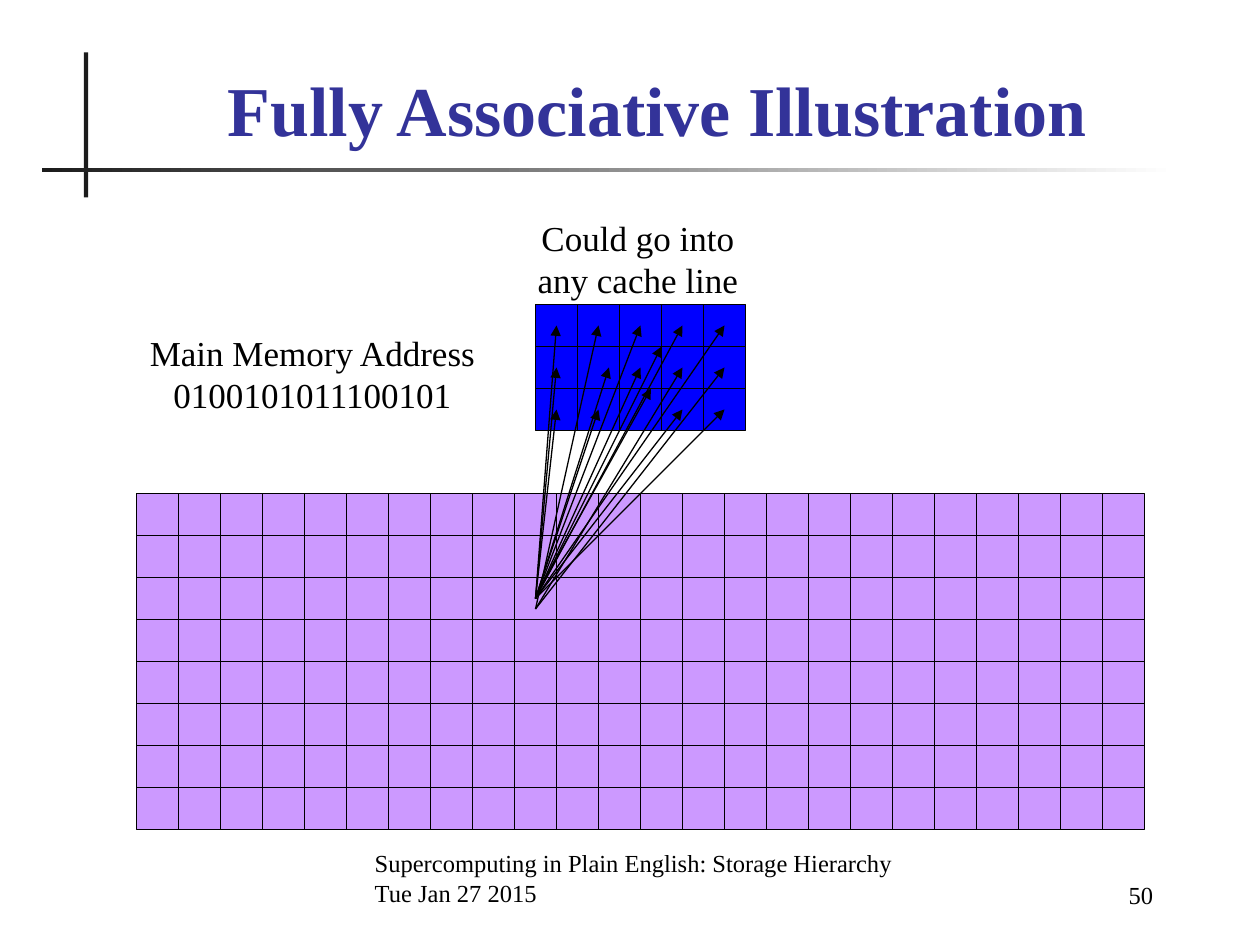
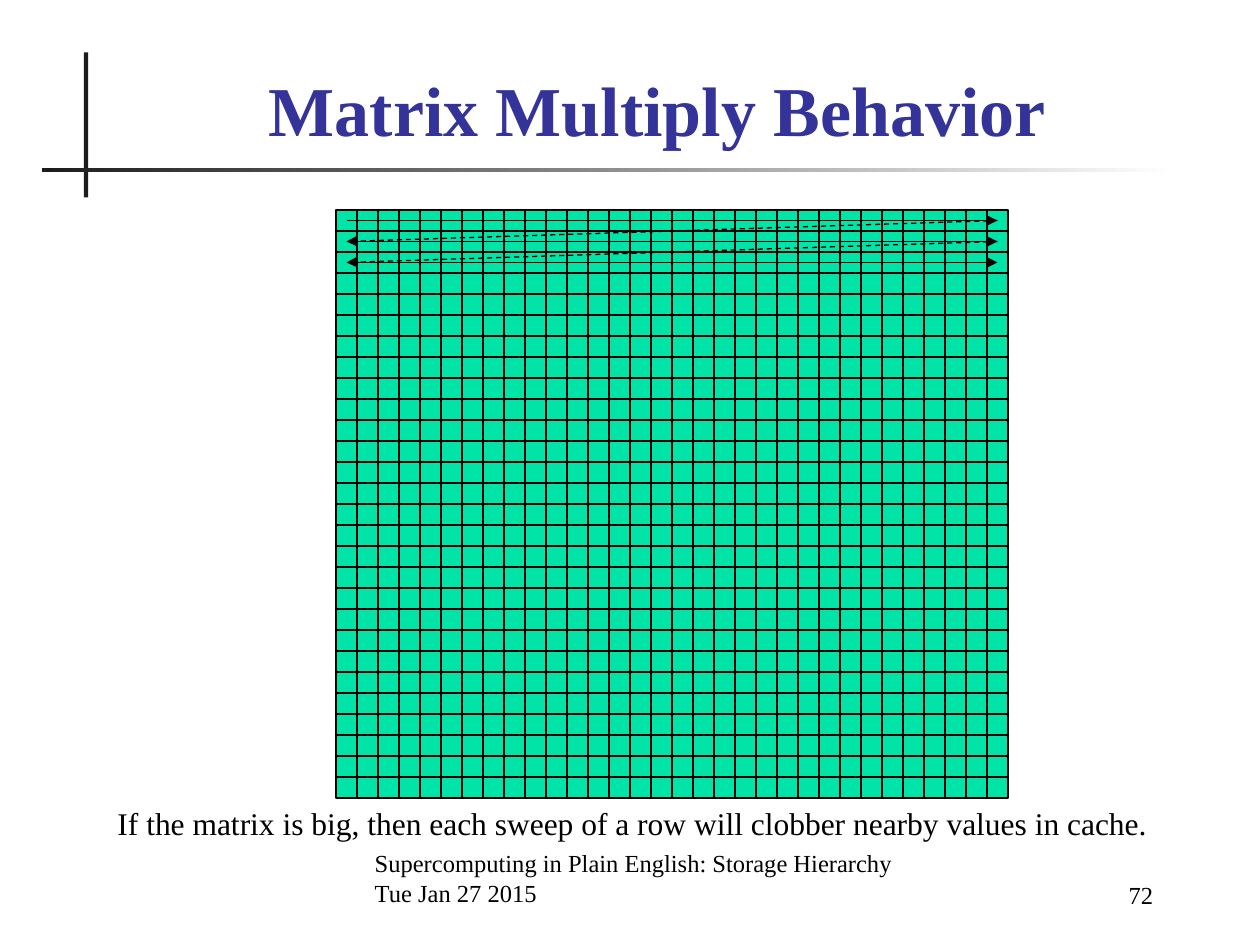
from itertools import product
from lxml.etree import SubElement as Sub
from pptx import Presentation
from pptx.dml.color import RGBColor
from pptx.enum.dml import MSO_LINE as Dash
from pptx.enum.shapes import MSO_CONNECTOR as Conn, MSO_SHAPE as Shape
from pptx.enum.text import MSO_ANCHOR as Anchor, PP_ALIGN as Align
from pptx.oxml.ns import qn
from pptx.util import Inches, Pt

# The slide is a grid of 120 columns by 90 rows.
COLS, ROWS = 120, 90
WIDE, HIGH = Inches(10), Inches(7.5)
FONT = "Times New Roman"
BLACK, WHITE, RULE, NAVY = "000000", "FFFFFF", "1C1C1C", "333399"
LILAC, BLUE, GREEN = "CC99FF", "0000FF", "00E4A8"
FOOTER = ["Supercomputing in Plain English: Storage Hierarchy", "Tue Jan 27 2015"]


def rgb(code):
    return RGBColor.from_string(code)


def place(*nums):
    """Turn alternating columns and rows into lengths."""
    return [int(n * (HIGH / ROWS if i % 2 else WIDE / COLS))
            for i, n in enumerate(nums)]


def write(slide, box, lines, size, color=BLACK, bold=False,
          align=Align.CENTER, anchor=Anchor.TOP, wrap=False):
    frame = slide.shapes.add_textbox(*place(*box)).text_frame
    frame.word_wrap, frame.vertical_anchor = wrap, anchor
    frame.text = "\n".join(lines)
    style = {"name": FONT, "size": Pt(size), "bold": bold}
    for para in frame.paragraphs:
        para.alignment = align
        for key, value in style.items():
            setattr(para.font, key, value)
        para.font.color.rgb = rgb(color)


def rect(slide, box, color):
    shape = slide.shapes.add_shape(Shape.RECTANGLE, *place(*box))
    shape.shadow.inherit = False
    shape.fill.solid()
    shape.fill.fore_color.rgb = rgb(color)
    shape.line.fill.background()
    return shape


def stroke(line):
    line.width = Pt(0.75)
    line.color.rgb = rgb(BLACK)


def link(slide, start, end, arrow=False, dash=False):
    conn = slide.shapes.add_connector(Conn.STRAIGHT, *place(*start, *end))
    stroke(conn.line)
    if dash:
        conn.line.dash_style = Dash.DASH
    if arrow:
        Sub(conn.line._get_or_add_ln(), qn("a:tailEnd"), type="triangle")
    Sub(conn._element.spPr, qn("a:effectLst"))


def mesh(slide, box, cell, color):
    """Draw a filled box ruled into square cells."""
    left, top, wide, high = box
    stroke(rect(slide, box, color).line)
    for x in range(left + cell, left + wide, cell):
        link(slide, (x, top), (x, top + high))
    for y in range(top + cell, top + high, cell):
        link(slide, (left, y), (left + wide, y))


def frame_page(deck, title, page):
    slide = deck.slides.add_slide(deck.slide_layouts[6])
    rect(slide, (8, 5, 0.4, 13.8), RULE)
    fill = rect(slide, (4, 16, 108, 0.4), RULE).fill
    fill.gradient()
    fill.gradient_angle = 0
    for stop, code in zip(fill.gradient_stops, (RULE, WHITE)):
        stop.color.rgb = rgb(code)
    low = {"anchor": Anchor.BOTTOM, "wrap": True}
    write(slide, (34.5, 81, 52.5, 6), FOOTER, 14, align=Align.LEFT, **low)
    write(slide, (94, 81.2, 17, 6), [str(page)], 14, align=Align.RIGHT, **low)
    write(slide, (10, 6, 105.2, 8.9), [title], 40, NAVY, True, **low)
    return slide


def fan(slide, box, cell, root):
    """Send an arrow from the root to every cache line."""
    left, top = box[:2]
    x, y = root
    lower = {(1, 0), (3, 1), (4, 1)}
    nudge = {(1, 1): (1, 0), (2, 2): (1, -2)}
    for col, row in product(range(5), range(3)):
        dx, dy = nudge.get((col, row), (0, 0))
        start = (x, y + ((col, row) in lower))
        if (col, row) == (2, 2):
            start = (x + 1, y - 2)
        end = (left + (col + 0.5) * cell + dx, top + (row + 0.5) * cell + dy)
        link(slide, start, end, arrow=True)
    link(slide, root, (left + 3 * cell, top + cell), arrow=True)


def cache_page(deck):
    slide = frame_page(deck, "Fully Associative Illustration", 50)
    cache, cell = (51, 29, 20, 12), 4
    mesh(slide, (13, 47, 96, 32), cell, LILAC)
    mesh(slide, cache, cell, BLUE)
    write(slide, (50, 20, 21.5, 9.2), ["Could go into", "any cache line"], 20)
    write(slide, (13, 31, 33.5, 9.2),
          ["Main Memory Address", "0100101011100101"], 20)
    fan(slide, cache, cell, (51, 57))


def sweep(slide, box, cell, count):
    """Run along each row, then back to the start of the next."""
    left, top, wide, _ = box
    near, far = left + cell / 2, left + wide - cell / 2
    for row in range(count):
        y = top + (row + 0.5) * cell
        if row:
            link(slide, (far, y - cell), (near, y), arrow=True, dash=True)
        link(slide, (near, y), (far, y), arrow=True)


def matrix_page(deck):
    slide = frame_page(deck, "Matrix Multiply Behavior", 72)
    box, cell = (32, 20, 64, 56), 2
    mesh(slide, box, cell, GREEN)
    sweep(slide, box, cell, 3)
    write(slide, (10, 76, 100.5, 4.8),
          ["If the matrix is big, then each sweep of a row "
           "will clobber nearby values in cache."], 18)


def main():
    deck = Presentation()
    deck.slide_width, deck.slide_height = WIDE, HIGH
    cache_page(deck)
    matrix_page(deck)
    deck.save("out.pptx")


if __name__ == "__main__":
    main()
